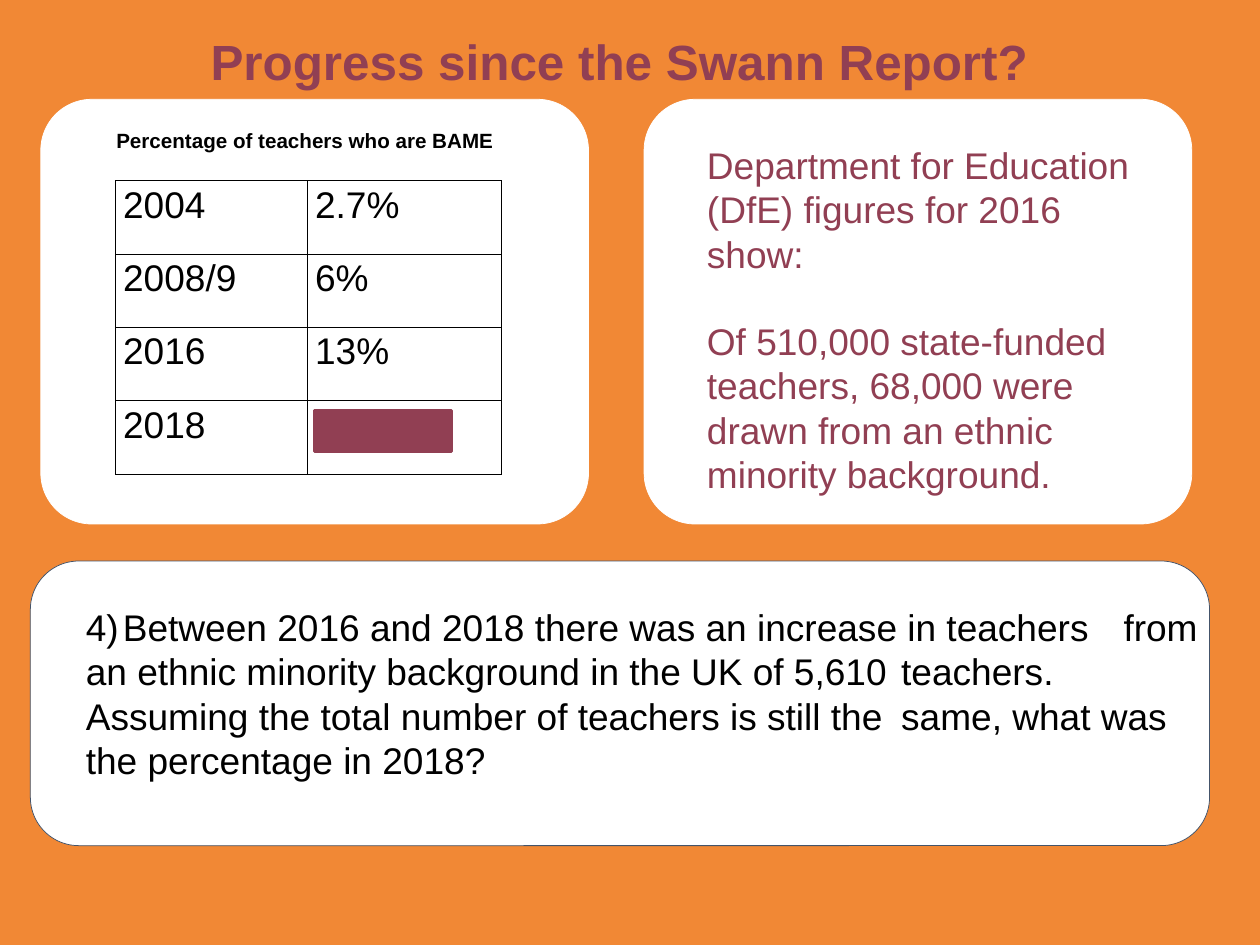
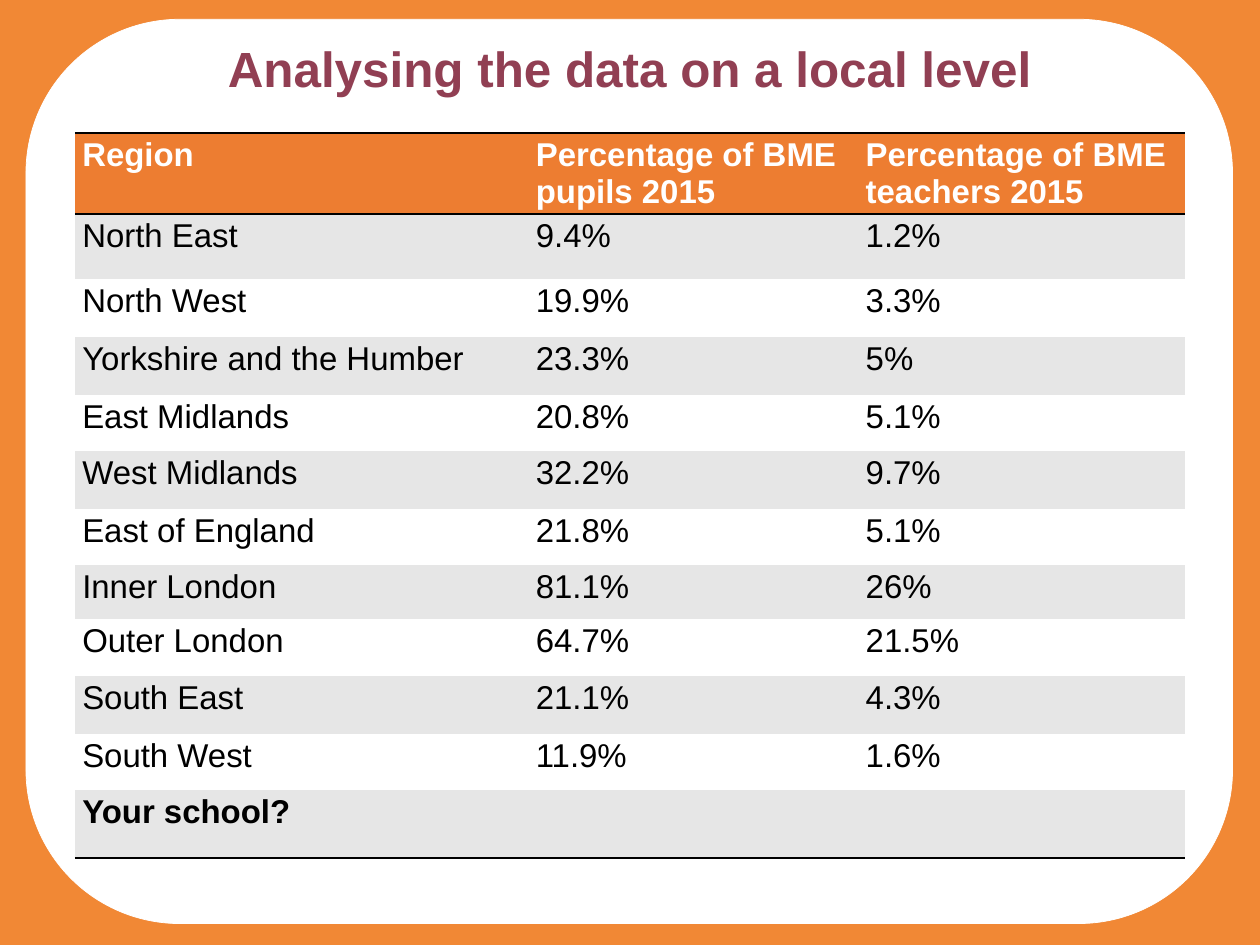
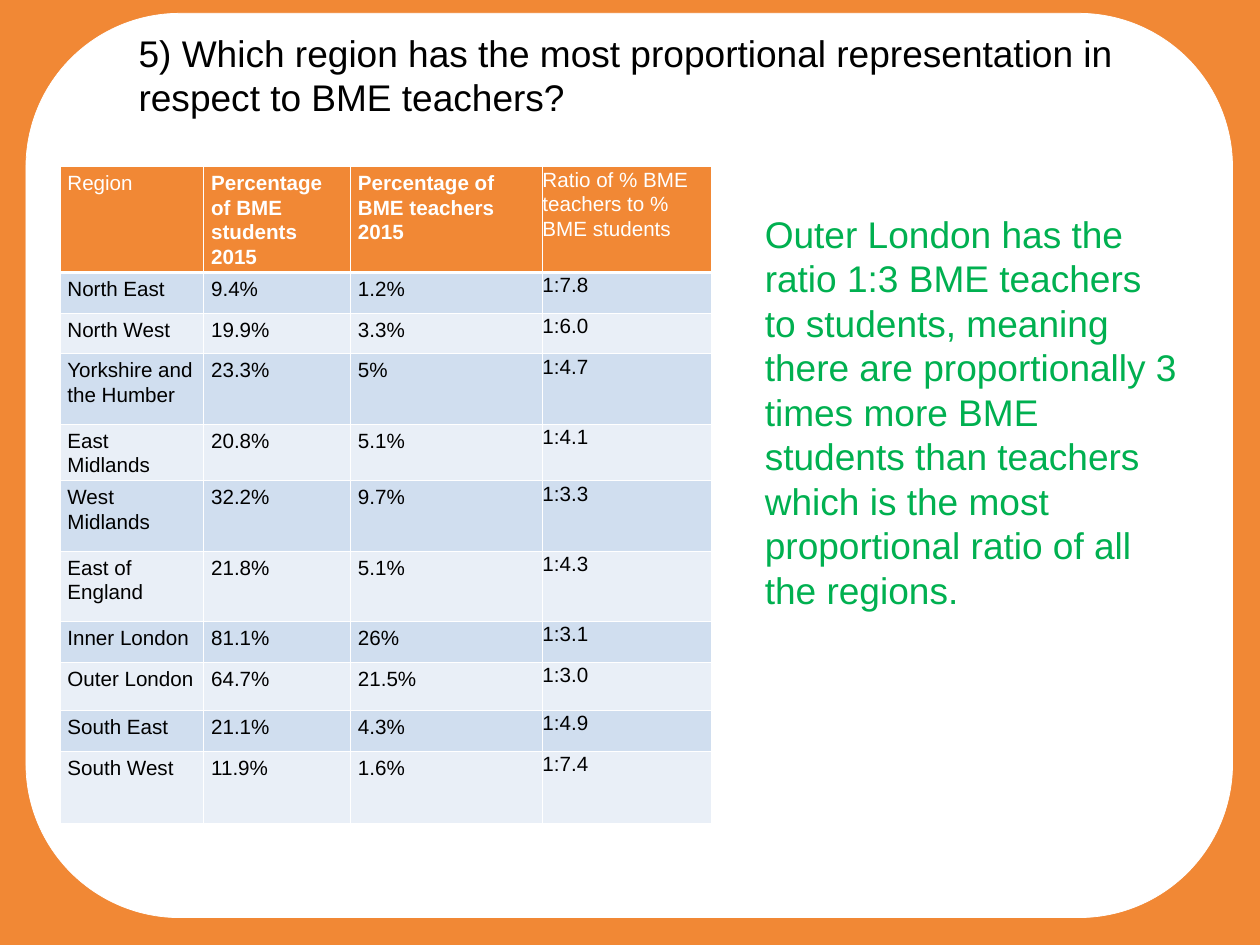
from lxml.etree import SubElement
from pptx import Presentation
from pptx.dml.color import RGBColor
from pptx.enum.shapes import MSO_SHAPE
from pptx.enum.text import MSO_ANCHOR, MSO_AUTO_SIZE, PP_ALIGN
from pptx.oxml.ns import qn
from pptx.util import Inches, Pt

# Shared style
WIDE, HIGH = 17, 12.75
FONT = "Arial"
ORANGE, PLUM, GREEN = "F18835", "913F53", "00B050"
WHITE, BLACK, SLATE = "FFFFFF", "000000", "44546A"
PLAIN = "{2D5ABB26-0587-4C30-8999-92F81FD0307C}"  # table style with no grid

# Percentage of BME pupils and teachers in each region
DATA = [
    ("North East", 9.4, 1.2),
    ("North West", 19.9, 3.3),
    ("Yorkshire and the Humber", 23.3, 5),
    ("East Midlands", 20.8, 5.1),
    ("West Midlands", 32.2, 9.7),
    ("East of England", 21.8, 5.1),
    ("Inner London", 81.1, 26),
    ("Outer London", 64.7, 21.5),
    ("South East", 21.1, 4.3),
    ("South West", 11.9, 1.6),
]


def tint(code):
    return RGBColor.from_string(code)


def across(share):
    return Inches(WIDE * share / 100)


def down(share):
    return Inches(HIGH * share / 100)


def box(x, y, w, h):
    return across(x), down(y), across(w), down(h)


class Deck:
    """Holds the style and the current slide; lengths are per cent of the slide."""

    def __init__(self):
        self.file = Presentation()
        self.file.slide_width, self.file.slide_height = Inches(WIDE), Inches(HIGH)
        back = self.file.slide_master.background.fill
        back.solid()
        back.fore_color.rgb = tint(ORANGE)

    def start(self):
        self.slide = self.file.slides.add_slide(self.file.slide_layouts[5])
        self.shapes = self.slide.shapes

    def words(self, para, text, size, color=BLACK, bold=False):
        run = para.add_run()
        run.text = text
        run.font.name, run.font.size, run.font.bold = FONT, Pt(size), bold
        run.font.color.rgb = tint(color)

    def title(self, area, text, size=48, color=PLUM, bold=True, align=PP_ALIGN.LEFT):
        head = self.shapes.title
        head.left, head.top, head.width, head.height = box(*area)
        frame = head.text_frame
        frame.auto_size = MSO_AUTO_SIZE.NONE
        frame.vertical_anchor = MSO_ANCHOR.TOP
        para = frame.paragraphs[0]
        para.alignment = align
        self.words(para, text, size, color, bold)
        self.shapes.element.append(head.element)  # bring in front of the panel

    def text(self, area, lines, size=36, color=BLACK, bold=False, gap=0):
        frame = self.shapes.add_textbox(*box(*area)).text_frame
        frame.word_wrap = True
        for i, line in enumerate(lines):
            para = frame.add_paragraph() if i else frame.paragraphs[0]
            if i:
                para.space_before = Pt(gap)
            self.words(para, line, size, color, bold)

    def block(self, area, fill=WHITE, line=WHITE, width=0.75, bend=None):
        kind = MSO_SHAPE.RECTANGLE if bend is None else MSO_SHAPE.ROUNDED_RECTANGLE
        shape = self.shapes.add_shape(kind, *box(*area))
        if bend is not None:
            shape.adjustments[0] = bend
        shape.shadow.inherit = False
        shape.fill.solid()
        shape.fill.fore_color.rgb = tint(fill)
        shape.line.color.rgb = tint(line)
        shape.line.width = Pt(width)

    def edge(self, cell, side, color, width):
        line = SubElement(cell._tc.get_or_add_tcPr(), qn("a:ln" + side), w=str(Pt(width)))
        if width:
            fill = SubElement(line, qn("a:solidFill"))
            SubElement(fill, qn("a:srgbClr"), val=color)
        else:
            SubElement(line, qn("a:noFill"))

    def table(self, x, y, cols, rows, cells, size, bands, head=None, heavy=(),
              ink=BLACK, grid=0, rules=None, space=None, flush=None):
        """rules maps a row boundary to a line width; flush is a column with no inset."""
        rules = rules or {}
        area = box(x, y, sum(cols), sum(rows))
        frame = self.shapes.add_table(len(rows), len(cols), *area)
        table = frame.table
        table._tbl.tblPr.find(qn("a:tableStyleId")).text = PLAIN
        for col, w in zip(table.columns, cols):
            col.width = across(w)
        for row, h in zip(table.rows, rows):
            row.height = down(h)
        for r, line in enumerate(cells):
            top = head is not None and r == 0
            for c, word in enumerate(line):
                cell = table.cell(r, c)
                widths = grid, grid, rules.get(r, grid), rules.get(r + 1, grid)
                for side, width in zip("LRTB", widths):
                    self.edge(cell, side, ink, width)
                cell.fill.solid()
                cell.fill.fore_color.rgb = tint(head if top else bands[r % len(bands)])
                if c == flush:
                    cell.margin_left = cell.margin_right = 0
                    cell.margin_top = cell.margin_bottom = 0
                para = cell.text_frame.paragraphs[0]
                if space:
                    para.line_spacing = space
                if word:
                    self.words(para, word, size, WHITE if top else BLACK, word in heavy)


def progress(deck):
    deck.start()
    for x in (3.24, 51.12):
        deck.block((x, 10.51, 43.47, 44.94), bend=0.12)
    deck.block((2.41, 59.37, 93.59, 30.12), line=SLATE, bend=0.17)
    deck.title((16.12, 2.9, 75.82, 4.47), "Progress since the Swann Report?")

    # Teachers by year, with a bar in place of the last answer
    deck.text((8.65, 13.18, 38.29, 3.45), ["Percentage of teachers who are BAME"],
              size=20, bold=True)
    years = [("2004", "2.7%"), ("2008/9", "6%"), ("2016", "13%"), ("2018", "")]
    deck.table(9.18, 19.14, (15.24, 15.35), [7.76] * 4, years, 36, [WHITE], grid=1)
    deck.block((24.94, 43.45, 10.88, 4.31), PLUM, PLUM, 3)

    # Figures and question
    deck.text((55.53, 14.67, 35.53, 38.82), [
        "Department for Education (DfE) figures for 2016 show:",
        "Of 510,000 state-funded teachers, 68,000 were drawn from an ethnic "
        "minority background.",
    ], color=PLUM, gap=41.4)
    deck.text((6.24, 63.53, 89.76, 24.55), [
        "4)\tBetween 2016 and 2018 there was an increase in teachers "
        "\tfrom an ethnic minority background in the UK of 5,610 "
        "\tteachers. Assuming the total number of teachers is still the "
        "\tsame, what was the percentage in 2018?",
    ])


def local(deck):
    deck.start()
    deck.block((2.06, 2.04, 95.76, 95.69), bend=0.17)
    deck.title((16.71, 3.69, 66.59, 12.39), "Analysing the data on a local level",
               align=PP_ALIGN.CENTER)
    heads = ("Region", "Percentage of BME pupils 2015", "Percentage of BME teachers 2015")
    last = ("Your school?", "", "")
    body = [(name, f"{pupils:g}%", f"{staff:g}%") for name, pupils, staff in DATA]
    rows = (6.82, 6.9, 6.12, 6.12, 5.96, 6.12, 5.96, 5.73, 5.96, 6.12, 5.96, 7.22)
    deck.table(5.94, 14.04, (36, 26.18, 25.94), rows, [heads, *body, last], 32,
               [WHITE, "E6E6E6"], head="ED7D31", heavy=heads + last,
               rules={0: 2, 1: 2, len(rows): 2})


def ratio(deck):
    deck.start()
    deck.block((2.06, 1.41, 95.76, 95.69), bend=0.17)
    deck.title((10.41, 2.82, 83.12, 10.27),
               "5) Which region has the most proportional representation in "
               "respect to BME teachers?", 36, BLACK, False)
    heads = ("Region", "Percentage of BME students 2015",
             "Percentage of BME teachers 2015",
             "Ratio of % BME teachers to % BME students")
    body = [(name, f"{pupils:g}%", f"{staff:g}%", f"1:{pupils / staff:.1f}")
            for name, pupils, staff in DATA]
    rows = (10.59, 4.31, 4.31, 7.45, 4.31, 7.45, 7.45, 4.31, 5.1, 4.31, 7.69)
    deck.table(4.76, 17.65, (11.41, 11.65, 15.24, 13.41), rows, [heads, *body], 20,
               ["E9EFF7", "D0DEEF"], head=ORANGE, heavy=heads[1:3], ink=WHITE,
               grid=1, rules={1: 3}, space=1.07, flush=3)
    deck.text((60.12, 21.96, 34, 43.53), [
        "Outer London has the ratio 1:3 BME teachers to students, meaning there "
        "are proportionally 3 times more BME students than teachers which is "
        "the most proportional ratio of all the regions.",
    ], color=GREEN)


def main():
    deck = Deck()
    for page in (progress, local, ratio):
        page(deck)
    deck.file.save("out.pptx")


if __name__ == "__main__":
    main()
